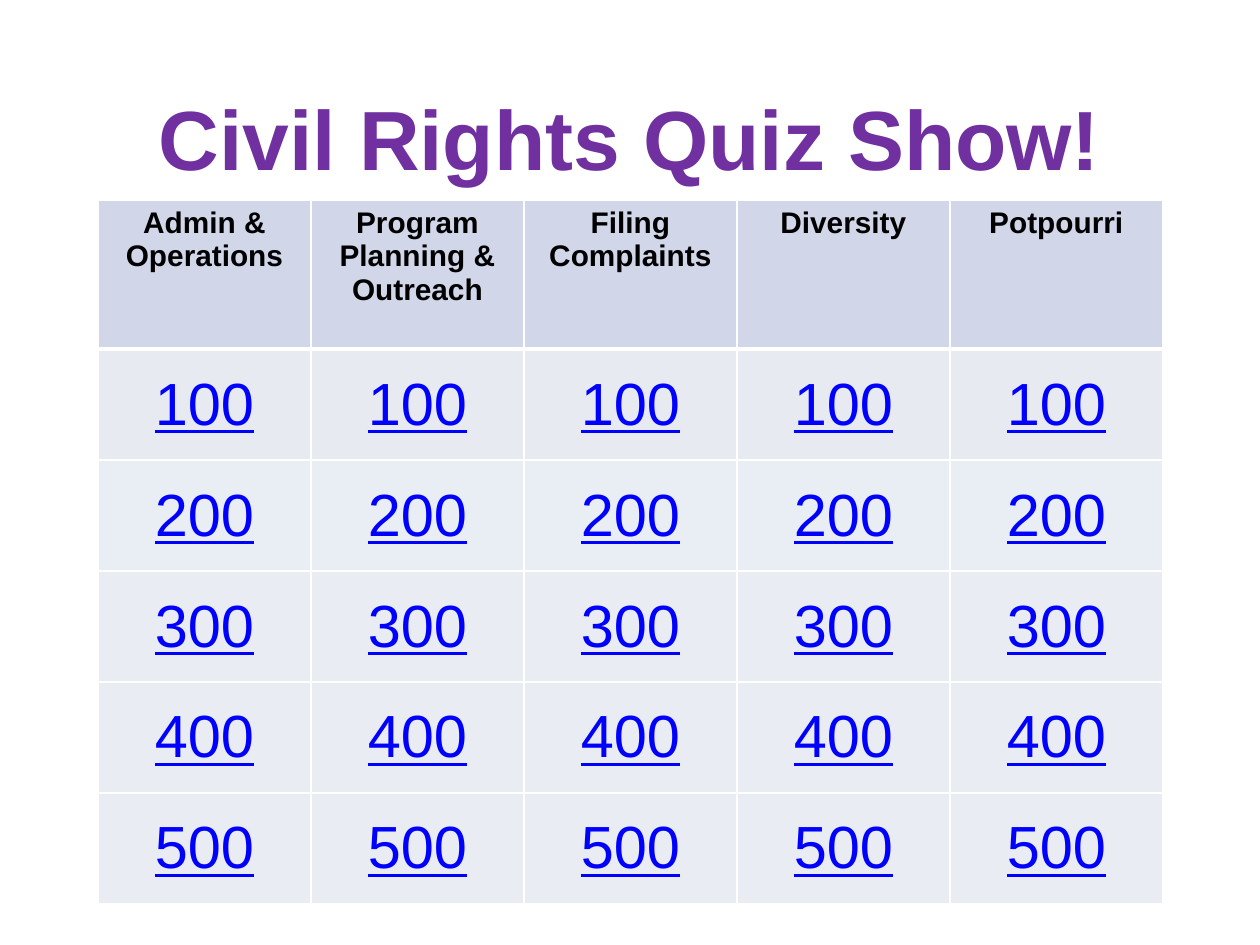
from lxml.etree import SubElement
from pptx import Presentation
from pptx.dml.color import RGBColor
from pptx.enum.text import MSO_ANCHOR as Anchor, PP_ALIGN as Align
from pptx.oxml.ns import qn
from pptx.util import Emu, Pt

PURPLE = RGBColor(0x70, 0x30, 0xA0)
BLACK = RGBColor(0x00, 0x00, 0x00)
LINK_BLUE = RGBColor(0x00, 0x00, 0xFF)
WHITE = RGBColor(0xFF, 0xFF, 0xFF)
HEADER_FILL = RGBColor(0xD1, 0xD6, 0xE9)
ROW_FILLS = [RGBColor(0xE7, 0xEA, 0xF0), RGBColor(0xE9, 0xED, 0xF4)]
ROW_FILLS += [RGBColor(0xE9, 0xEC, 0xF3)] * 3

CATEGORIES = ["Admin & Operations", "Program Planning & Outreach",
              "Filing Complaints", "Diversity", "Potpourri"]
COLUMN_WIDTH, HEADER_HEIGHT, ROW_HEIGHT = 213, 149, 111


def px(length):
    return Emu(round(length * 914400 / 126))


def style_text(frame, text, size, color, bold=False, underline=False):
    paragraph = frame.paragraphs[0]
    paragraph.text = text
    paragraph.alignment = Align.CENTER
    font = paragraph.font
    font.name, font.size, font.bold = "Arial", Pt(size), bold
    font.underline = underline
    font.color.rgb = color


presentation = Presentation()
presentation.slide_width, presentation.slide_height = px(1260), px(945)
slide = presentation.slides.add_slide(presentation.slide_layouts[6])

# Title
title = slide.shapes.add_textbox(px(63), px(58), px(1134), px(158))
title.text_frame.word_wrap = True
title.text_frame.vertical_anchor = Anchor.MIDDLE
style_text(title.text_frame, "Civil Rights Quiz Show!", 48, PURPLE, bold=True)

# Game board
row_count, column_count = len(ROW_FILLS) + 1, len(CATEGORIES)
board = slide.shapes.add_table(
    row_count, column_count, px(98), px(200), px(COLUMN_WIDTH * column_count),
    px(HEADER_HEIGHT + ROW_HEIGHT * len(ROW_FILLS))).table
board.horz_banding = False
for column in board.columns:
    column.width = px(COLUMN_WIDTH)

for row_index, row in enumerate(board.rows):
    is_header = row_index == 0
    row.height = px(HEADER_HEIGHT if is_header else ROW_HEIGHT)
    for category, cell in zip(CATEGORIES, row.cells):
        # White grid, with a thicker rule under the header
        widths = {"a:lnL": 1, "a:lnR": 1,
                  "a:lnT": 3 if row_index == 1 else 1,
                  "a:lnB": 3 if is_header else 1}
        properties = cell._tc.get_or_add_tcPr()
        for tag, width in widths.items():
            line = SubElement(properties, qn(tag), w=str(Pt(width)))
            line_fill = SubElement(line, qn("a:solidFill"))
            SubElement(line_fill, qn("a:srgbClr"), val=str(WHITE))

        # Category names, then point values
        cell.fill.solid()
        if is_header:
            cell.fill.fore_color.rgb = HEADER_FILL
            style_text(cell.text_frame, category, 17, BLACK, bold=True)
        else:
            cell.fill.fore_color.rgb = ROW_FILLS[row_index - 1]
            cell.vertical_anchor = Anchor.MIDDLE
            style_text(cell.text_frame, str(row_index * 100), 34, LINK_BLUE,
                       underline=True)

presentation.save("out.pptx")
